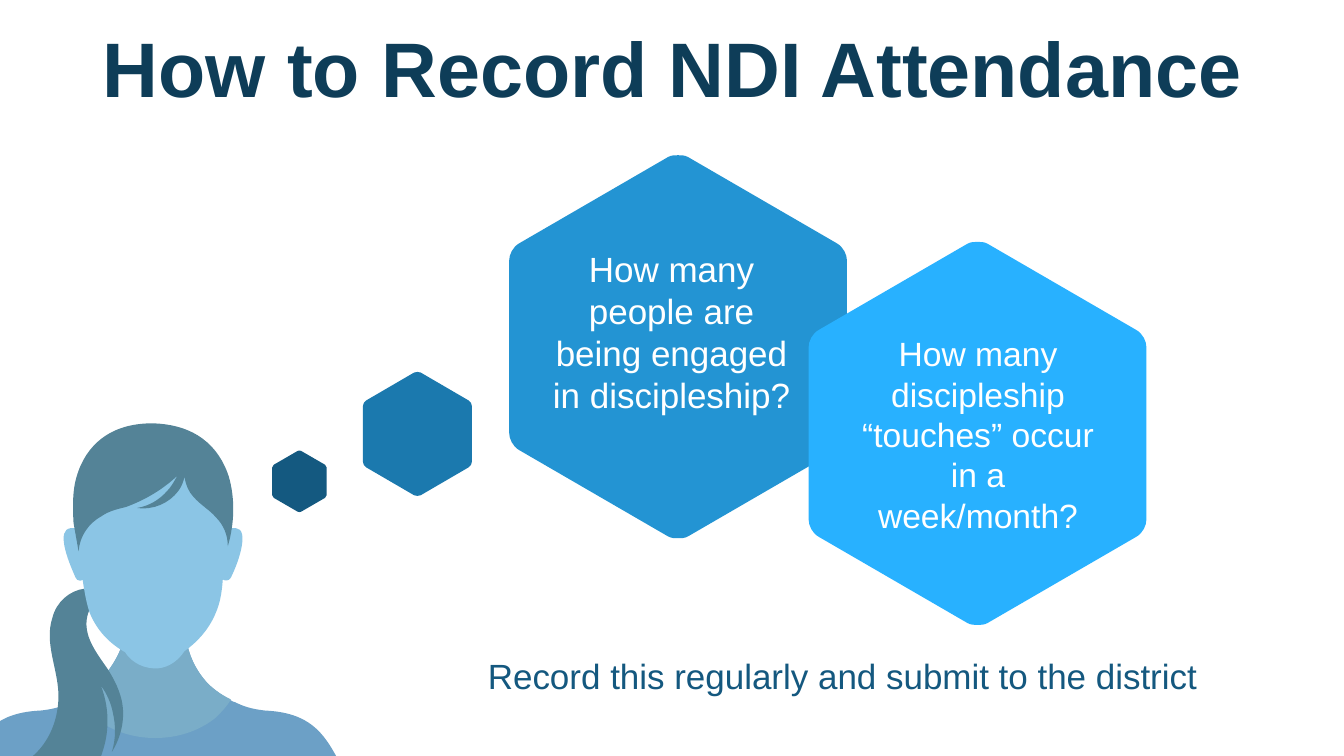
import lxml.etree
import pptx
import pptx.util
import pptx.dml.color
import pptx.enum.text
import pptx.oxml.ns

Inches = pptx.util.Inches
qn = pptx.oxml.ns.qn
CENTER = pptx.enum.text.PP_ALIGN.CENTER
MIDDLE = pptx.enum.text.MSO_ANCHOR.MIDDLE
NO_FIT = pptx.enum.text.MSO_AUTO_SIZE.NONE

SHOULDERS = [
    (1.25, 2.26), (1.19, 2.56, 1, 2.8, 0.72, 2.96), (0.71, 2.96, 0.69, 2.97, 0.68, 2.98),
    (0.59, 3.02, 0.5, 3.04, 0.4, 3.05), (-0.03, 3.07, -0.18, 3.27, -0.31, 3.53),
    (1.52, 3.53), (3.35, 3.53), (3.21, 3.27, 3.07, 3.07, 2.63, 3.05),
    (2.54, 3.04, 2.44, 3.02, 2.36, 2.98), (2.35, 2.98, 2.34, 2.97, 2.34, 2.97),
    (2.33, 2.96, 2.32, 2.96, 2.31, 2.96), (2.22, 2.91, 2.13, 2.85, 2.06, 2.78),
    (1.93, 2.64, 1.85, 2.46, 1.84, 2.26), (1.25, 2.26)]
NECK = [
    (1.25, 2.26), (1.2, 2.54, 1.02, 2.77, 0.78, 2.92), (0.82, 2.99, 0.87, 3.06, 0.94, 3.12),
    (1.27, 3.39, 1.81, 3.39, 2.14, 3.12), (2.2, 3.06, 2.25, 3.01, 2.29, 2.94),
    (2.21, 2.9, 2.13, 2.85, 2.06, 2.78), (1.93, 2.64, 1.85, 2.46, 1.84, 2.26), (1.25, 2.26)]
PONYTAIL = [
    (0.84, 1.84), (0.86, 1.79, 0.92, 1.76, 0.96, 1.79), (1, 1.82, 1.02, 1.88, 0.99, 1.93),
    (0.92, 1.98, 0.87, 2.06, 0.86, 2.15), (0.84, 2.33, 0.96, 2.48, 1.07, 2.64),
    (1.12, 2.72, 1.17, 2.81, 1.2, 2.92), (1.25, 3.1, 1.21, 3.3, 1.11, 3.46),
    (1.15, 3.33, 1.15, 3.2, 1.12, 3.07), (1.1, 2.97, 1.06, 2.88, 1, 2.8),
    (1.08, 3, 1.09, 3.24, 1.02, 3.45), (1, 3.52, 0.97, 3.59, 0.93, 3.65), (0.03, 3.64),
    (0.36, 3.59, 0.59, 3.26, 0.58, 2.88), (0.57, 2.62, 0.44, 2.38, 0.52, 2.13),
    (0.56, 1.97, 0.69, 1.86, 0.84, 1.84)]
FACE = [
    (1.52, 0.28), (1.12, 0.28, 0.88, 0.48, 0.8, 0.77), (0.76, 0.91, 0.76, 1.07, 0.77, 1.24),
    (0.76, 1.24, 0.75, 1.24, 0.73, 1.24), (0.72, 1.24, 0.71, 1.24, 0.7, 1.24),
    (0.63, 1.25, 0.62, 1.32, 0.64, 1.42), (0.66, 1.52, 0.71, 1.64, 0.75, 1.73),
    (0.76, 1.75, 0.77, 1.76, 0.79, 1.76), (0.8, 1.76, 0.82, 1.76, 0.82, 1.75),
    (0.84, 1.89, 0.86, 1.99, 0.89, 2.08), (0.96, 2.25, 1.08, 2.38, 1.24, 2.47),
    (1.31, 2.58, 1.44, 2.64, 1.57, 2.63), (1.68, 2.62, 1.77, 2.55, 1.83, 2.46),
    (1.97, 2.36, 2.08, 2.23, 2.14, 2.08), (2.18, 1.99, 2.2, 1.89, 2.21, 1.75),
    (2.23, 1.76, 2.27, 1.77, 2.29, 1.73), (2.38, 1.55, 2.47, 1.25, 2.34, 1.24),
    (2.33, 1.24, 2.31, 1.24, 2.3, 1.24), (2.29, 1.24, 2.28, 1.24, 2.27, 1.24),
    (2.28, 1.07, 2.28, 0.91, 2.24, 0.77), (2.15, 0.48, 1.92, 0.28, 1.52, 0.28)]
HAIR = [
    (1.51, 0.2), (1.09, 0.2, 0.85, 0.42, 0.76, 0.73), (0.72, 0.86, 0.72, 1.02, 0.73, 1.19),
    (0.78, 1.47), (0.79, 1.32, 0.88, 1.19, 1.01, 1.12), (1.08, 1.07, 1.17, 1.05, 1.25, 1.03),
    (1.44, 0.96, 1.61, 0.86, 1.76, 0.72), (1.73, 0.77, 1.7, 0.83, 1.66, 0.87),
    (1.58, 0.96, 1.48, 1.02, 1.36, 1.04), (1.52, 1.06, 1.67, 1, 1.77, 0.87),
    (1.8, 0.83, 1.82, 0.78, 1.83, 0.73), (1.84, 0.8, 1.87, 0.88, 1.92, 0.93),
    (1.99, 1.01, 2.08, 1.06, 2.14, 1.13), (2.22, 1.21, 2.26, 1.31, 2.26, 1.42),
    (2.33, 1.18, 2.33, 0.94, 2.27, 0.73), (2.17, 0.42, 1.93, 0.21, 1.51, 0.2)]
HALF_HEXAGON = [
    (0.5, 0), (0.51, 0, 0.52, 0, 0.53, 0.005), (0.97, 0.23),
    (0.99, 0.24, 1, 0.26, 1, 0.275), (1, 0.725), (1, 0.74, 0.99, 0.76, 0.97, 0.77),
    (0.53, 0.995), (0.52, 1, 0.51, 1, 0.5, 1)]
HEXAGON = HALF_HEXAGON + [tuple(1 - v for v in part) for part in HALF_HEXAGON[1:]]


def color(value):
    """Turn a hex string into a colour."""
    return pptx.dml.color.RGBColor.from_string(value)


def draw_outline(s, outline, fill, x, y, w=1, h=1):
    """Draw a filled outline of lines and cubic curves, scaled and moved in inches."""
    parts = [[(Inches(x + w * u), Inches(y + h * v)) for u, v in zip(part[::2], part[1::2])]
             for part in outline]
    builder = s.shapes.build_freeform(*parts[0][0], scale=1.0)
    builder.add_line_segments([part[-1] for part in parts[1:]], close=True)
    sp = builder.convert_to_shape()
    segments = list(sp._element.iter(qn("a:lnTo")))
    for segment, part in zip(segments, parts[1:]):
        if len(part) == 3:
            curve = lxml.etree.Element(qn("a:cubicBezTo"))
            for px, py in part:
                lxml.etree.SubElement(curve, qn("a:pt"), x=str(px - sp.left), y=str(py - sp.top))
            segment.getparent().replace(segment, curve)
    sp.shadow.inherit = False
    sp.fill.solid()
    sp.fill.fore_color.rgb = color(fill)
    sp.line.fill.background()


def place_text(sp, box, text, size, fill, bold=False, spacing=1.0):
    """Place a text shape in its box and format its single paragraph."""
    sp.left, sp.top, sp.width, sp.height = map(Inches, box)
    tf = sp.text_frame
    margins = {f"margin_{side}": Inches(0.05) for side in ("left", "right", "top", "bottom")}
    frame = {"word_wrap": True, "auto_size": NO_FIT, "vertical_anchor": MIDDLE, **margins}
    for name, value in frame.items():
        setattr(tf, name, value)
    p = tf.paragraphs[0]
    p.alignment = CENTER
    p.line_spacing = spacing
    r = p.add_run()
    r.text = text
    for name, value in {"name": "Arial", "size": pptx.util.Pt(size), "bold": bold}.items():
        setattr(r.font, name, value)
    r.font.color.rgb = color(fill)


def add_text(s, box, text, size, fill):
    """Add a text box."""
    sp = s.shapes.add_textbox(*map(Inches, box))
    place_text(sp, box, text, size, fill)


def add_question(s, box, fill, offset, text, size):
    """Draw a large hexagon with a question inside it."""
    draw_outline(s, HEXAGON, fill, *box)
    add_text(s, (box[0] + offset[0], box[1] + offset[1], 2.64, 2.13), text, size, "FFFFFF")


def add_person(s, x, y):
    """Draw the thinking person from the given origin."""
    parts = [(SHOULDERS, "6CA0C6"), (NECK, "7AADC8"), (PONYTAIL, "548397"),
             (FACE, "8BC5E5"), (HAIR, "548397")]
    for outline, fill in parts:
        draw_outline(s, outline, fill, x, y)


def main():
    """Build the attendance slide."""
    prs = pptx.Presentation()
    prs.slide_width, prs.slide_height = Inches(13.33), Inches(7.5)
    s = prs.slides.add_slide(prs.slide_layouts[5])
    place_text(s.shapes.title, (0.92, -0.01, 11.5, 1.45), "How to Record NDI Attendance",
               55.2, "0E3D58", bold=True, spacing=0.9)
    add_person(s, 0, 4)
    draw_outline(s, HEXAGON, "145980", 2.7, 4.47, 0.54, 0.61)
    draw_outline(s, HEXAGON, "1B79AE", 3.6, 3.69, 1.08, 1.23)
    add_question(s, (5.05, 1.54, 3.35, 3.8), "2394D3", (0.29, 0.68),
                 "How many people are being engaged in discipleship?", 25)
    add_question(s, (8.02, 2.4, 3.35, 3.8), "28B1FF", (0.36, 0.84),
                 "How many discipleship “touches” occur in a week/month?", 24)
    add_text(s, (4.49, 6.38, 7.73, 0.64),
             "Record this regularly and submit to the district", 25, "14587F")
    prs.save("out.pptx")


if __name__ == "__main__":
    main()
